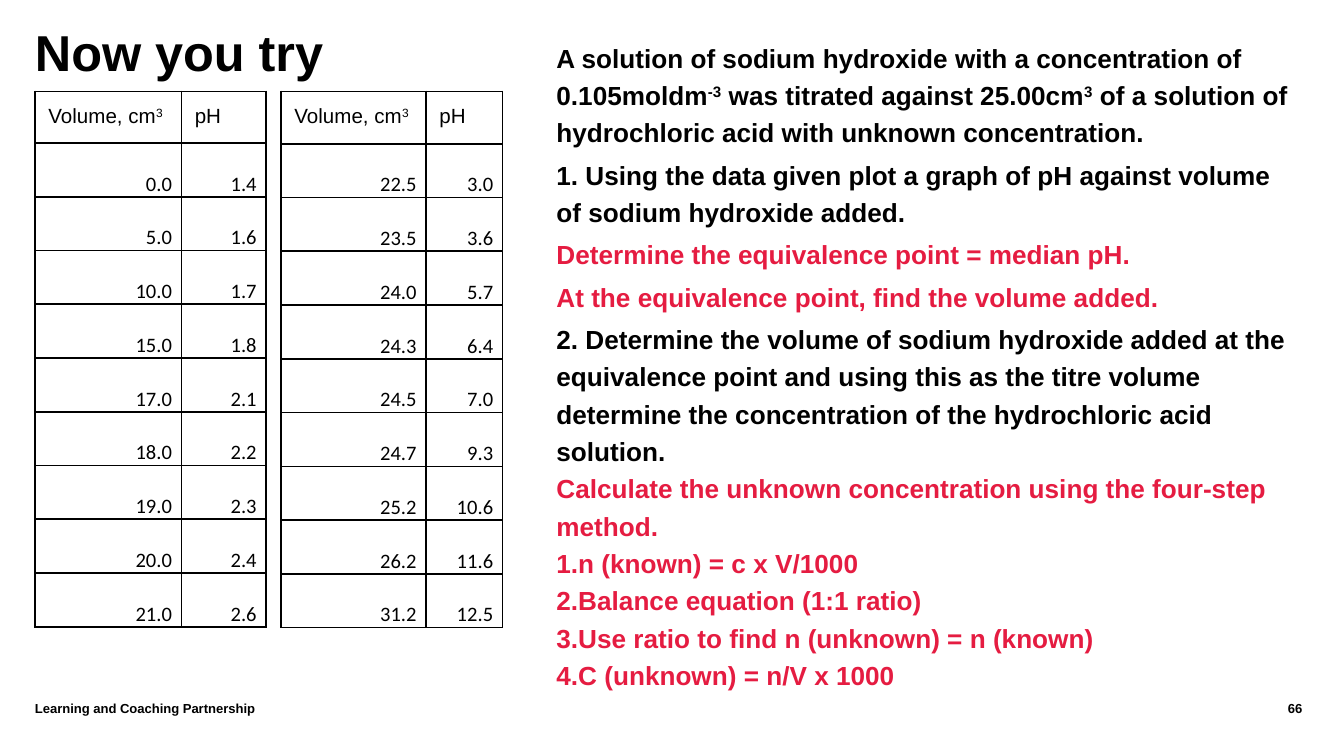
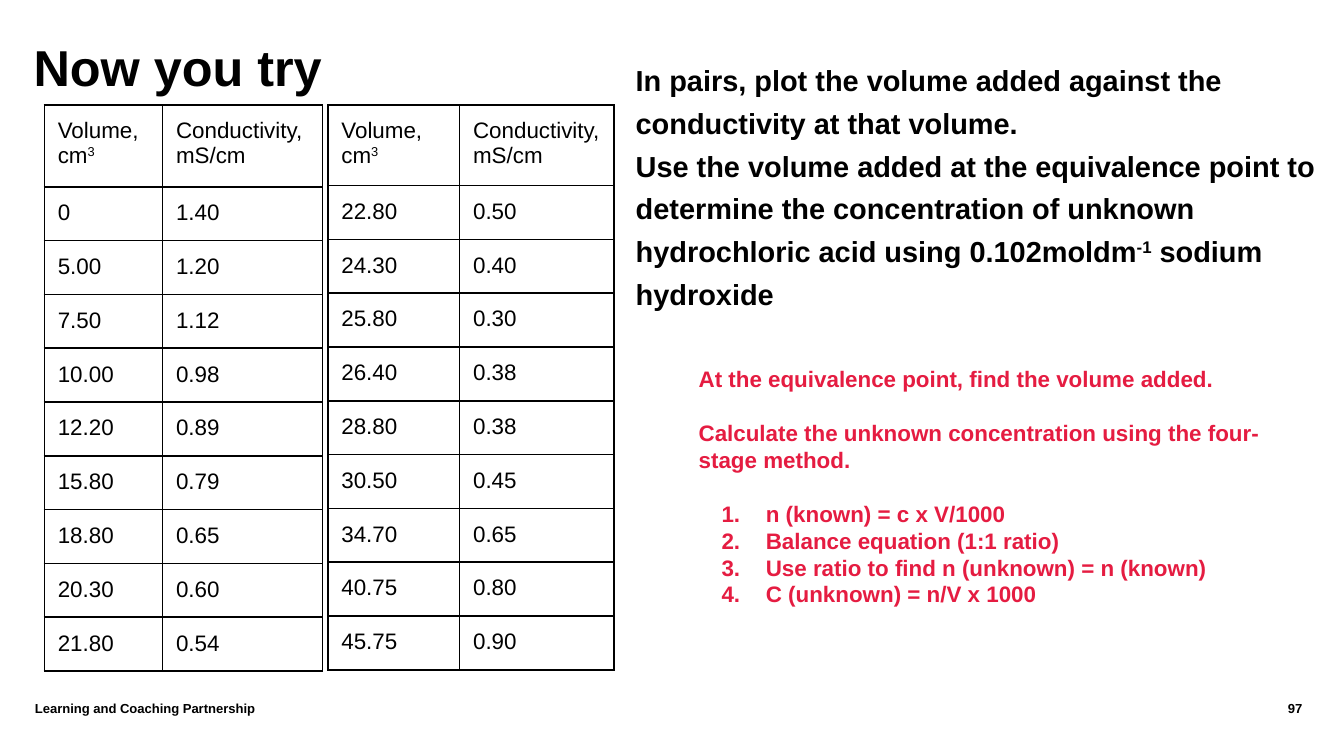
from dataclasses import dataclass
from lxml.etree import SubElement as Sub
from pptx import Presentation
from pptx.dml.color import RGBColor as RGB
from pptx.enum.text import MSO_ANCHOR as Anchor, PP_ALIGN as Align
from pptx.oxml.ns import qn
from pptx.util import Inches, Pt


@dataclass
class Theme:
    ink: str = "000000"
    red: str = "E51C41"
    face: str = "Arial"
    data: str = "Calibri"
    title: float = 27
    foot: float = 7
    note: float = 12
    rule: float = 1


look = Theme()


def write(frame, lines, size, bold=True, face=look.face, align=Align.LEFT, step=1.0):
    for i, (text, tone, gap, left) in enumerate(lines):
        para = frame.paragraphs[0] if i == 0 else frame.add_paragraph()
        para.alignment = align
        para.line_spacing = step
        para.space_before = Pt(gap)
        if left is not None:
            prop = para._p.get_or_add_pPr()
            prop.set("marL", str(Inches(left)))
            prop.set("indent", str(Inches(-0.33)))
            Sub(Sub(prop, qn("a:buClr")), qn("a:srgbClr"), val=tone)
            Sub(prop, qn("a:buAutoNum"), type="arabicPeriod")
        font = para.font
        font.name, font.size, font.bold = face, Pt(size), bold
        font.color.rgb = RGB.from_string(tone)
        for j, part in enumerate(text.split("^")):
            run = para.add_run()
            run.text = part
            if j % 2:
                run._r.get_or_add_rPr().set("baseline", "30000")


def place(shape, spot, inset=0):
    shape.left, shape.top, shape.width, shape.height = map(Inches, spot)
    frame = shape.text_frame
    frame.word_wrap = True
    frame.vertical_anchor = Anchor.TOP
    frame.margin_left = frame.margin_right = Inches(inset)
    frame.margin_top = frame.margin_bottom = Inches(inset)
    return frame


steps = [
    "n (known) = c x V/1000",
    "Balance equation (1:1 ratio)",
    "Use ratio to find n (unknown) = n (known)",
    "C (unknown) = n/V x 1000",
]
find = "At the equivalence point, find the volume added."
acid = [
    ("A solution of sodium hydroxide with a concentration of 0.105moldm^-3^ was titrated "
     "against 25.00cm^3^ of a solution of hydrochloric acid with unknown concentration.",
     look.ink, 2.7, None),
    ("1. Using the data given plot a graph of pH against volume of sodium hydroxide added.",
     look.ink, 2.7, None),
    ("Determine the equivalence point = median pH.", look.red, 2.7, None),
    (find, look.red, 2.7, None),
    ("2. Determine the volume of sodium hydroxide added at the equivalence point and using "
     "this as the titre volume determine the concentration of the hydrochloric acid solution.",
     look.ink, 2.7, None),
    ("Calculate the unknown concentration using the four-step method.", look.red, 0, None),
] + [(step, look.red, 0, 0) for step in steps]
pairs = [
    ("In pairs, plot the volume added against the conductivity at that volume.",
     look.ink, 0, None),
    ("Use the volume added at the equivalence point to determine the concentration of unknown "
     "hydrochloric acid using 0.102moldm^-1^ sodium hydroxide", look.ink, 0, None),
]
hints = [
    (find, look.red, 0, None),
    ("Calculate the unknown concentration using the four-stage method.", look.red, 14.4, None),
] + [(step, look.red, 14.4 if i == 0 else 0, 0.5) for i, step in enumerate(steps)]

pages = [
    dict(
        num="66", title=(0.26, 0.16, 9.23, 0.76),
        texts=[(acid, (4.14, 0.27, 5.51, 5.19), 0, 14, 1.19)],
        head=("Volume, cm^3^", "pH"), size=11, low=True,
        grids=[
            (0.26, 0.68, 4, (1.09, 0.63), [0.38] + [0.4] * 9,
             "0.0 5.0 10.0 15.0 17.0 18.0 19.0 20.0 21.0",
             "1.4 1.6 1.7 1.8 2.1 2.2 2.3 2.4 2.6"),
            (2.09, 0.68, 4.01, (1.08, 0.57), [0.39] + [0.4] * 9,
             "22.5 23.5 24.0 24.3 24.5 24.7 25.2 26.2 31.2",
             "3.0 3.6 5.7 6.4 7.0 9.3 10.6 11.6 12.5"),
        ],
    ),
    dict(
        num="97", title=(0.25, 0.27, 9.23, 0.76),
        texts=[(pairs, (4.73, 0.41, 5.41, 2.36), 0, 15.5, 1.23),
               (hints, (5.1, 2.62, 4.68, 2.08), 0.1, look.note, 1.0)],
        head=("Volume, cm^3^", "Conductivity, mS/cm"), size=12, low=False,
        grids=[
            (0.33, 0.78, 4.21, (0.88, 1.19), [0.61] + [0.4] * 9,
             "0 5.00 7.50 10.00 12.20 15.80 18.80 20.30 21.80",
             "1.40 1.20 1.12 0.98 0.89 0.79 0.65 0.60 0.54"),
            (2.44, 0.78, 4.2, (0.98, 1.15), [0.55, 0.36, 0.33, 0.36, 0.36] + [0.33] * 5,
             "22.80 24.30 25.80 26.40 28.80 30.50 34.70 40.75 45.75",
             "0.50 0.40 0.30 0.38 0.38 0.45 0.65 0.80 0.90"),
        ],
    ),
]

deck = Presentation()
deck.slide_width = Inches(10)
deck.slide_height = deck.slide_width * 9 // 16

for page in pages:
    slide = deck.slides.add_slide(deck.slide_layouts[5])
    shapes = slide.shapes
    frame = place(shapes.title, page["title"])
    write(frame, [("Now you try", look.ink, 0, None)], look.title)

    for lines, spot, inset, size, step in page["texts"]:
        box = shapes.add_textbox(0, 0, 0, 0)
        write(place(box, spot, inset), lines, size, step=step)

    for left, top, tall, wide, highs, xs, ys in page["grids"]:
        rows = [page["head"], *zip(xs.split(), ys.split())]
        grid = shapes.add_table(len(rows), 2, Inches(left), Inches(top),
                                Inches(sum(wide)), Inches(tall))
        table = grid.table
        table.first_row = table.horz_banding = False
        for col, width in zip(table.columns, wide):
            col.width = Inches(width)
        for r, row in enumerate(rows):
            table.rows[r].height = Inches(highs[r])
            low = page["low"] and r > 0
            for c, text in enumerate(row):
                cell = table.cell(r, c)
                cell.margin_left = cell.margin_right = Inches(0.07 if low else 0.1)
                cell.margin_top = cell.margin_bottom = Inches(0 if low else 0.1)
                cell.vertical_anchor = Anchor.BOTTOM if low else Anchor.TOP
                write(cell.text_frame, [(text, look.ink, 0, None)], page["size"], False,
                      look.data if low else look.face, Align.RIGHT if low else Align.LEFT)
                prop = cell._tc.get_or_add_tcPr()
                for side in ("lnL", "lnR", "lnT", "lnB"):
                    line = Sub(prop, qn("a:" + side), w=str(Pt(look.rule)))
                    Sub(Sub(line, qn("a:solidFill")), qn("a:srgbClr"), val=look.ink)
                cell.fill.background()
        grid.height = Inches(tall)

    for text, spot, align in (
        ("Learning and Coaching Partnership", (0.26, 5.21, 8.41, 0.3), Align.LEFT),
        (page["num"], (8.7, 5.21, 0.99, 0.3), Align.RIGHT),
    ):
        box = shapes.add_textbox(0, 0, 0, 0)
        write(place(box, spot), [(text, look.ink, 0, None)], look.foot, align=align)

deck.save("out.pptx")
